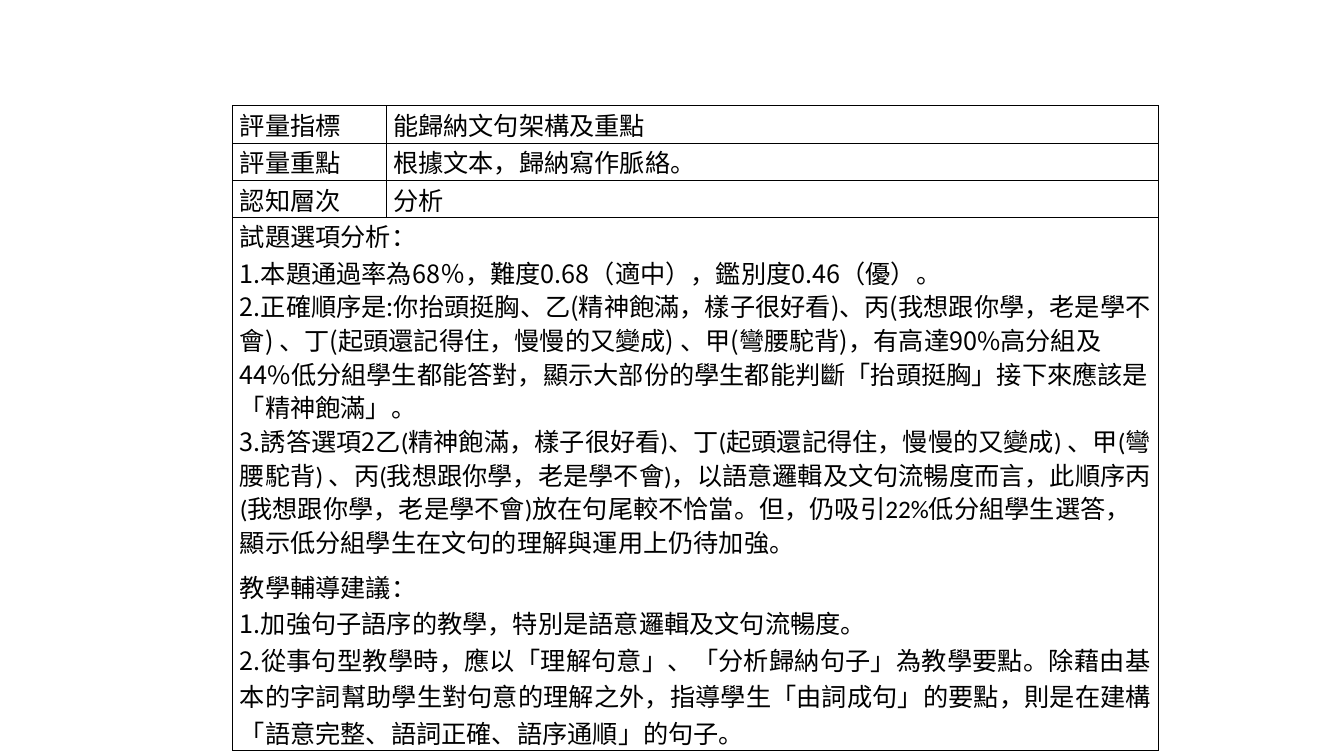
"""Build a slide with the assessment table of one reading question."""
import dataclasses

import lxml.etree
import pptx
import pptx.dml.color
import pptx.enum.text
import pptx.oxml.ns
import pptx.util


@dataclasses.dataclass(frozen=True)
class Theme:
    """Colours, fonts and sizes of the slide."""
    ink: str = "000000"
    serif: str = "Times New Roman"
    sans: str = "Noto Sans CJK SC"
    latin: str = "Calibri"
    text_size: int = 18
    line_spacing: int = 24
    section_gap: int = 6
    border: int = 1
    cell_margin: float = 0.07


THEME = Theme()
WIDTH, HEIGHT = 13.33, 7.5
TABLE_LEFT, TABLE_TOP, TABLE_WIDTH = 2.31 / WIDTH, 0.14, 9.18 / WIDTH
LABEL_SHARE = 1.52 / 9.18
HEADING_HEIGHT, ANALYSIS_HEIGHT = 0.37, 5

JUSTIFY = pptx.enum.text.PP_ALIGN.JUSTIFY

HEADINGS = [
    ("評量指標", THEME.serif, "能歸納文句架構及重點", None),
    ("評量重點", THEME.latin, "根據文本，歸納寫作脈絡。", JUSTIFY),
    ("認知層次", THEME.latin, "分析", JUSTIFY),
]

JUSTIFIED = {"alignment": JUSTIFY}
FIXED = {"line_spacing": pptx.util.Pt(THEME.line_spacing)}
SECTION = {**JUSTIFIED, "space_before": pptx.util.Pt(THEME.section_gap)}

ANALYSIS = [
    (JUSTIFIED, [("試題選項分析：", THEME.sans)]),
    (JUSTIFIED, [("1.本題通過率為68％，難度0.68（適中），鑑別度0.46（優）。", THEME.sans)]),
    (FIXED, [
        ("2.正確順序是:你抬頭挺胸、乙(精神飽滿，樣子很好看)、丙(我想跟你學，老是學不會) "
         "、丁(起頭還記得住，慢慢的又變成) 、甲(彎腰駝背)，有高達90%高分組及44%低分組學生都能答對，"
         "顯示大部份的學生都能判斷「抬頭挺胸」接下來", THEME.sans),
        ("應該是「精神飽滿」。", THEME.latin),
    ]),
    (FIXED, [
        ("3.", THEME.sans),
        ("誘答選項", THEME.latin),
        ("2", THEME.sans),
        ("乙(精神飽滿，樣子很好看)、丁(起頭還記得住，慢慢的又變成) 、甲(彎腰駝背) "
         "、丙(我想跟你學，老是學不會)，以語意邏輯及文句流暢度而言，此順序丙(我想跟你學，老是學不會)"
         "放在句尾較不恰當。但，仍吸引22%低分組學生選答，顯示低分組學生在文句的理解與運用上仍待加強。",
         THEME.latin),
    ]),
    (SECTION, [("教學輔導建議：", THEME.sans)]),
    (JUSTIFIED, [("1.加強句子語序的教學，特別是語意邏輯及文句流暢度。", THEME.sans)]),
    (JUSTIFIED, [
        ("2.從事句型教學時，應以「理解句意」、「分析歸納句子」為教學要點。除藉由基本的字詞幫助學生對句意的"
         "理解之外，指導學生「由詞成句」的要點，則是在建構「語意完整、語詞正確、語序通順」的句子。",
         THEME.sans),
    ]),
]


def add_element(parent, tag, **attributes):
    """Append a DrawingML element and return it."""
    return lxml.etree.SubElement(parent, pptx.oxml.ns.qn(tag), attributes)


def draw_borders(cell):
    """Give a cell a thin line on all four sides."""
    properties = cell._tc.get_or_add_tcPr()
    for side in "LRTB":
        line = add_element(properties, f"a:ln{side}", w=str(pptx.util.Pt(THEME.border)))
        add_element(add_element(line, "a:solidFill"), "a:srgbClr", val=THEME.ink)


def prepare_cell(cell):
    """Set borders, empty fill and margins of a cell."""
    draw_borders(cell)
    cell.fill.background()
    cell.margin_left = cell.margin_right = pptx.util.Inches(THEME.cell_margin)
    cell.margin_top = cell.margin_bottom = 0


def write_run(paragraph, wording, typeface):
    """Add one run in the given typeface."""
    run = paragraph.add_run()
    run.text = wording
    run.font.size = pptx.util.Pt(THEME.text_size)
    run.font.color.rgb = pptx.dml.color.RGBColor.from_string(THEME.ink)
    run.font.name = typeface
    add_element(run.font._element, "a:ea", typeface=THEME.sans)


def write_cell(cell, paragraphs, anchor):
    """Fill a cell with paragraphs given as layout and runs."""
    cell.vertical_anchor = anchor
    for index, (layout, runs) in enumerate(paragraphs):
        frame = cell.text_frame
        paragraph = frame.add_paragraph() if index else frame.paragraphs[0]
        for setting, value in layout.items():
            setattr(paragraph, setting, value)
        for wording, typeface in runs:
            write_run(paragraph, wording, typeface)


def add_assessment_table(slide):
    """Add the empty grid with its merged analysis row."""
    heights = [HEADING_HEIGHT] * len(HEADINGS) + [ANALYSIS_HEIGHT]
    width = TABLE_WIDTH * WIDTH
    table = slide.shapes.add_table(
        len(heights), 2,
        pptx.util.Inches(TABLE_LEFT * WIDTH), pptx.util.Inches(TABLE_TOP * HEIGHT),
        pptx.util.Inches(width), pptx.util.Inches(sum(heights))).table
    table.first_row = table.horz_banding = False
    for column, share in zip(table.columns, (LABEL_SHARE, 1 - LABEL_SHARE)):
        column.width = pptx.util.Inches(width * share)
    for row, height in zip(table.rows, heights):
        row.height = pptx.util.Inches(height)
    for cell in table.iter_cells():
        prepare_cell(cell)
    table.cell(len(HEADINGS), 0).merge(table.cell(len(HEADINGS), 1))
    return table


def main():
    """Build and save the slide."""
    deck = pptx.Presentation()
    deck.slide_width = pptx.util.Inches(WIDTH)
    deck.slide_height = pptx.util.Inches(HEIGHT)
    slide = deck.slides.add_slide(deck.slide_layouts[6])
    table = add_assessment_table(slide)
    anchors = pptx.enum.text.MSO_ANCHOR
    for row, (label, label_face, detail, alignment) in enumerate(HEADINGS):
        layout = {"alignment": alignment}
        write_cell(table.cell(row, 0), [(layout, [(label, label_face)])], anchors.MIDDLE)
        write_cell(table.cell(row, 1), [(layout, [(detail, THEME.sans)])], anchors.MIDDLE)
    write_cell(table.cell(len(HEADINGS), 0), ANALYSIS, anchors.TOP)
    deck.save("out.pptx")


if __name__ == "__main__":
    main()
